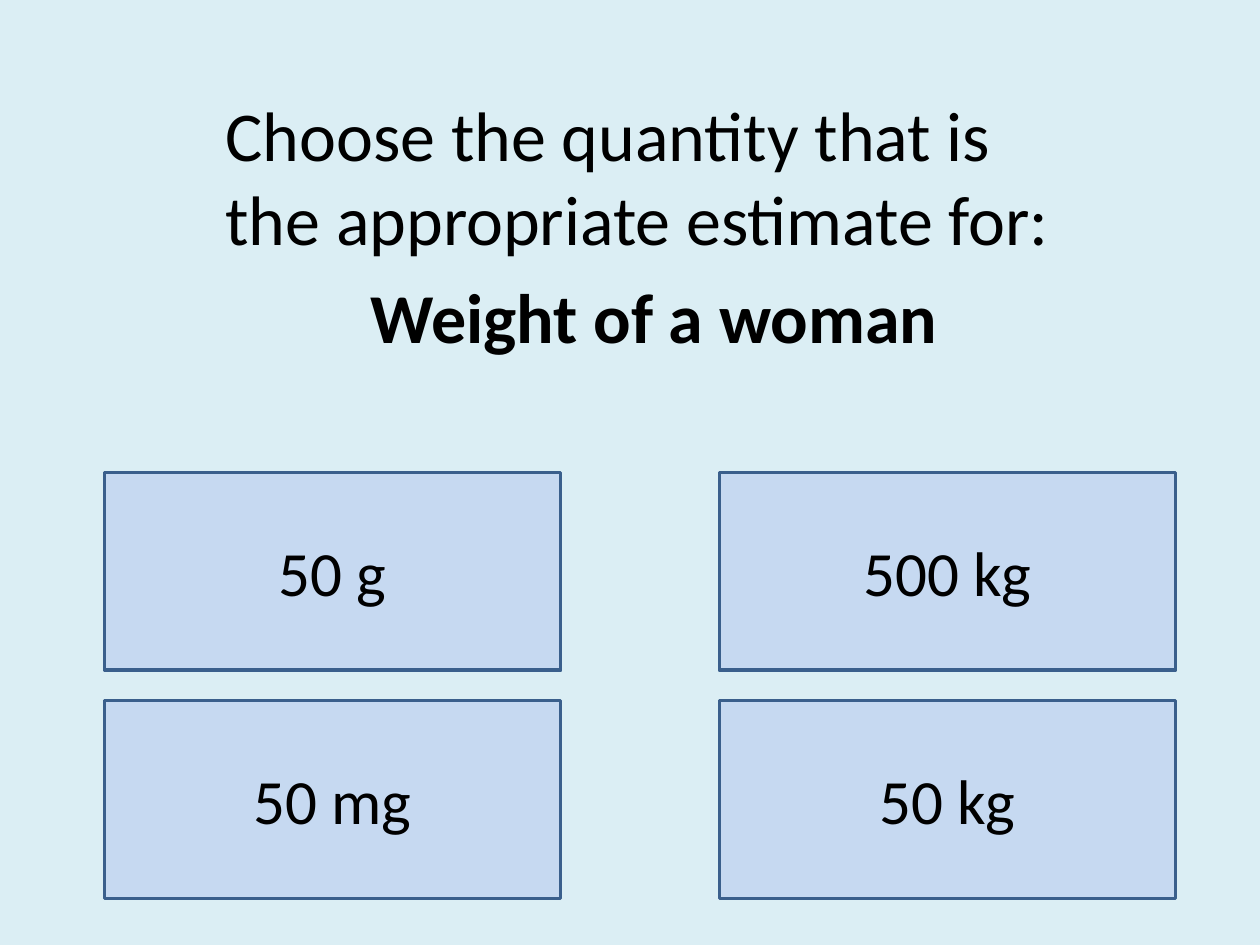
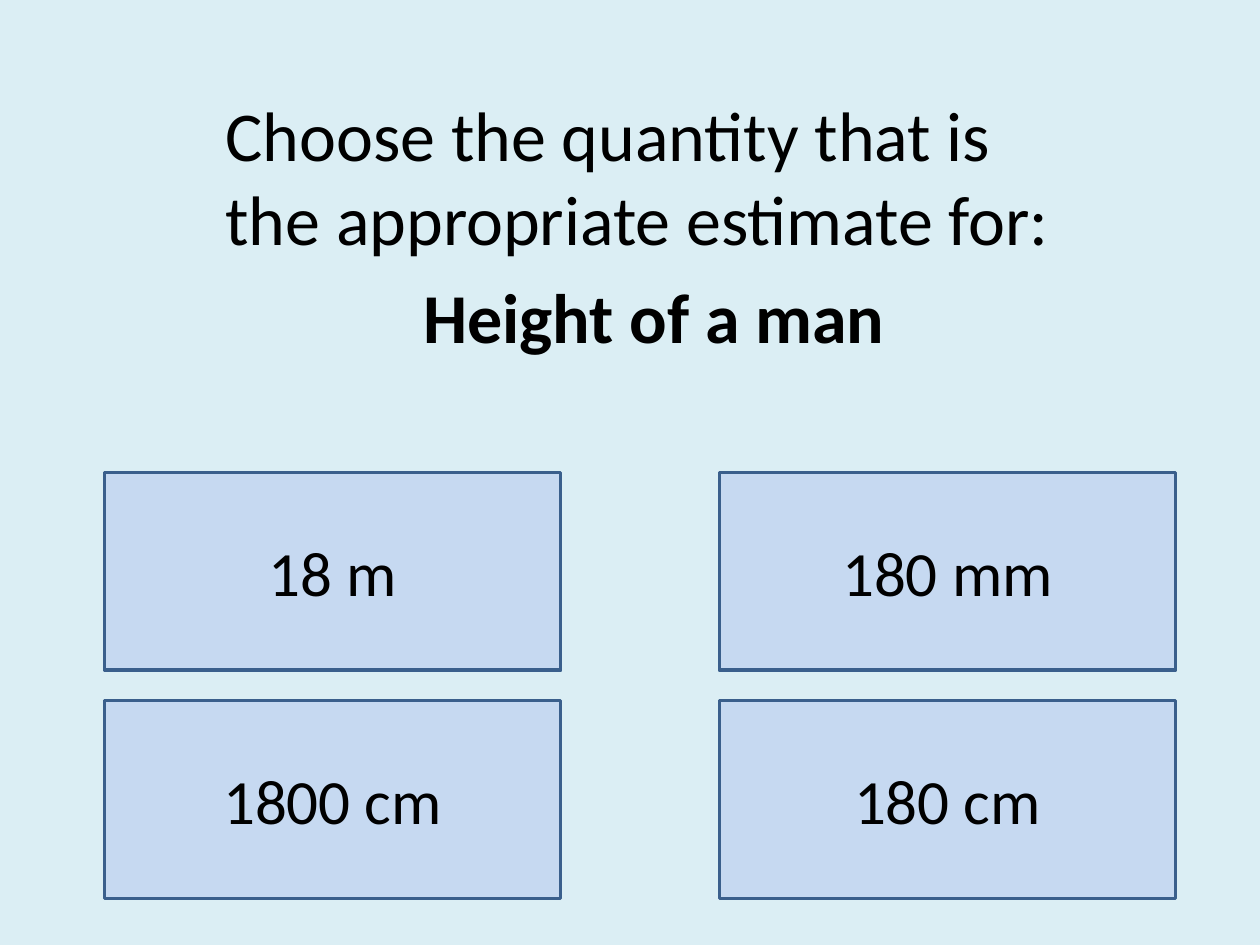
import pptx
import pptx.util
import pptx.dml.color
import pptx.enum.shapes
import pptx.enum.text
from pptx.util import Inches

COLORS = {"background": "DBEEF4", "answer": "C6D9F1", "border": "3A5F8C", "text": "000000"}
FONT = "Calibri"
PROMPT = "Choose the quantity that is the appropriate estimate for:"

# Regions as left, top, width, height
QUESTION_BOX = (Inches(1.69), Inches(0.68), Inches(7), Inches(2.45))
ANSWERS_BOX = (Inches(0.83), Inches(3.75), Inches(8.5), Inches(3.38))
ANSWER_WIDTH, ANSWER_HEIGHT = Inches(3.62), Inches(1.57)

# Subject, then the answers row by row
QUESTIONS = [
    ("Weight of a woman", [["50 g", "500 kg"], ["50 mg", "50 kg"]]),
    ("Height of a man", [["18 m", "180 mm"], ["1800 cm", "180 cm"]]),
]


def rgb(name):
    return pptx.dml.color.RGBColor.from_string(COLORS[name])


def write(paragraph, text, size, align, bold=False):
    paragraph.alignment = align
    run = paragraph.add_run()
    run.text = text
    run.font.name = FONT
    run.font.size = pptx.util.Pt(size)
    run.font.bold = bold
    run.font.color.rgb = rgb("text")


def add_question(slide, box, subject):
    question = slide.shapes.title
    question.left, question.top, question.width, question.height = box
    frame = question.text_frame
    frame.word_wrap = True
    frame.auto_size = pptx.enum.text.MSO_AUTO_SIZE.NONE
    frame.vertical_anchor = pptx.enum.text.MSO_ANCHOR.TOP
    write(frame.paragraphs[0], PROMPT, 40, pptx.enum.text.PP_ALIGN.LEFT)
    subject_line = frame.add_paragraph()
    subject_line.space_before = pptx.util.Pt(8)
    write(subject_line, subject, 40, pptx.enum.text.PP_ALIGN.CENTER, bold=True)


def add_answers(slide, box, rows):
    left, top, width, height = box
    # The outer answers touch the edges of the region
    column_step = width - ANSWER_WIDTH
    row_step = height - ANSWER_HEIGHT
    for row, quantities in enumerate(rows):
        for column, quantity in enumerate(quantities):
            answer = slide.shapes.add_shape(
                pptx.enum.shapes.MSO_SHAPE.RECTANGLE,
                left + column * column_step, top + row * row_step,
                ANSWER_WIDTH, ANSWER_HEIGHT)
            answer.shadow.inherit = False
            answer.fill.solid()
            answer.fill.fore_color.rgb = rgb("answer")
            answer.line.color.rgb = rgb("border")
            answer.line.width = pptx.util.Pt(2)
            answer.text_frame.vertical_anchor = pptx.enum.text.MSO_ANCHOR.MIDDLE
            write(answer.text_frame.paragraphs[0], quantity, 36,
                  pptx.enum.text.PP_ALIGN.CENTER)


def add_quiz_slide(deck, subject, rows):
    slide = deck.slides.add_slide(deck.slide_layouts.get_by_name("Title Only"))
    add_question(slide, QUESTION_BOX, subject)
    add_answers(slide, ANSWERS_BOX, rows)


def main():
    deck = pptx.Presentation()
    deck.slide_width, deck.slide_height = Inches(10), Inches(7.5)
    # Shared background
    backdrop = deck.slide_master.background.fill
    backdrop.solid()
    backdrop.fore_color.rgb = rgb("background")
    for subject, rows in QUESTIONS:
        add_quiz_slide(deck, subject, rows)
    deck.save("out.pptx")


if __name__ == "__main__":
    main()
